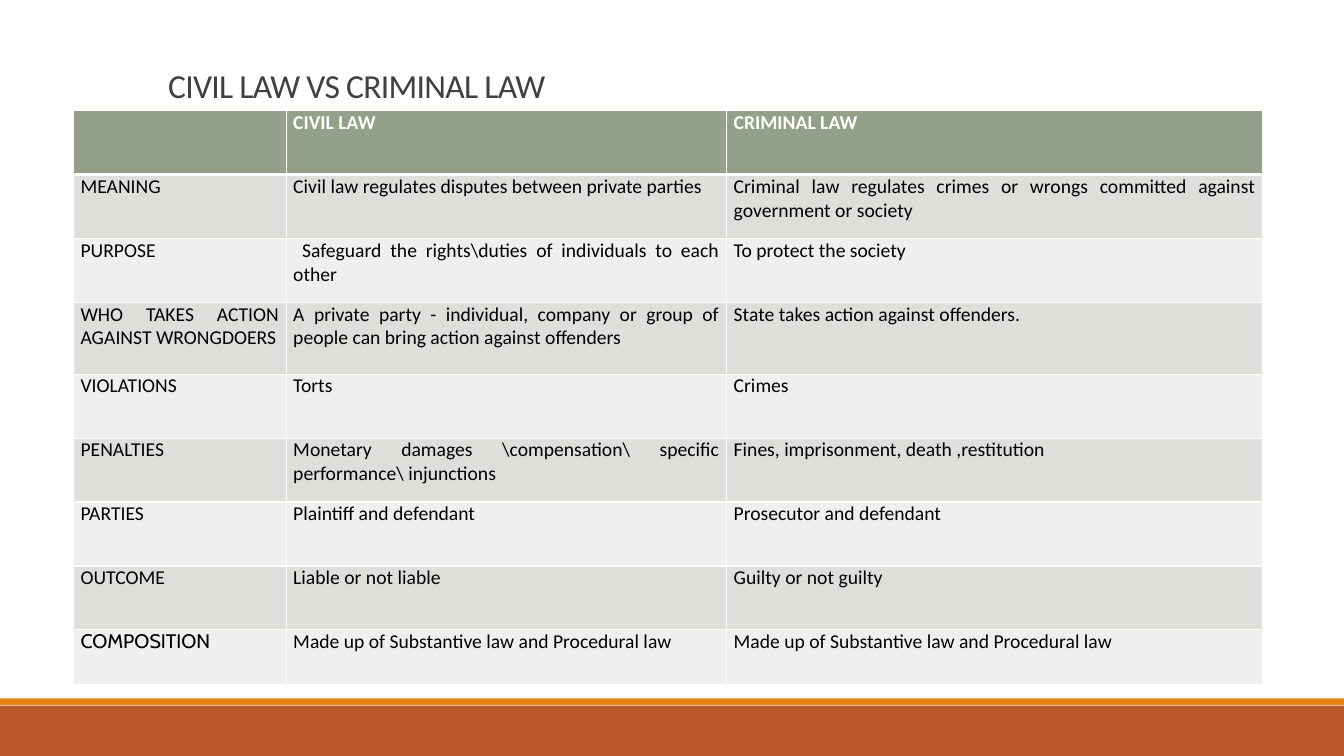
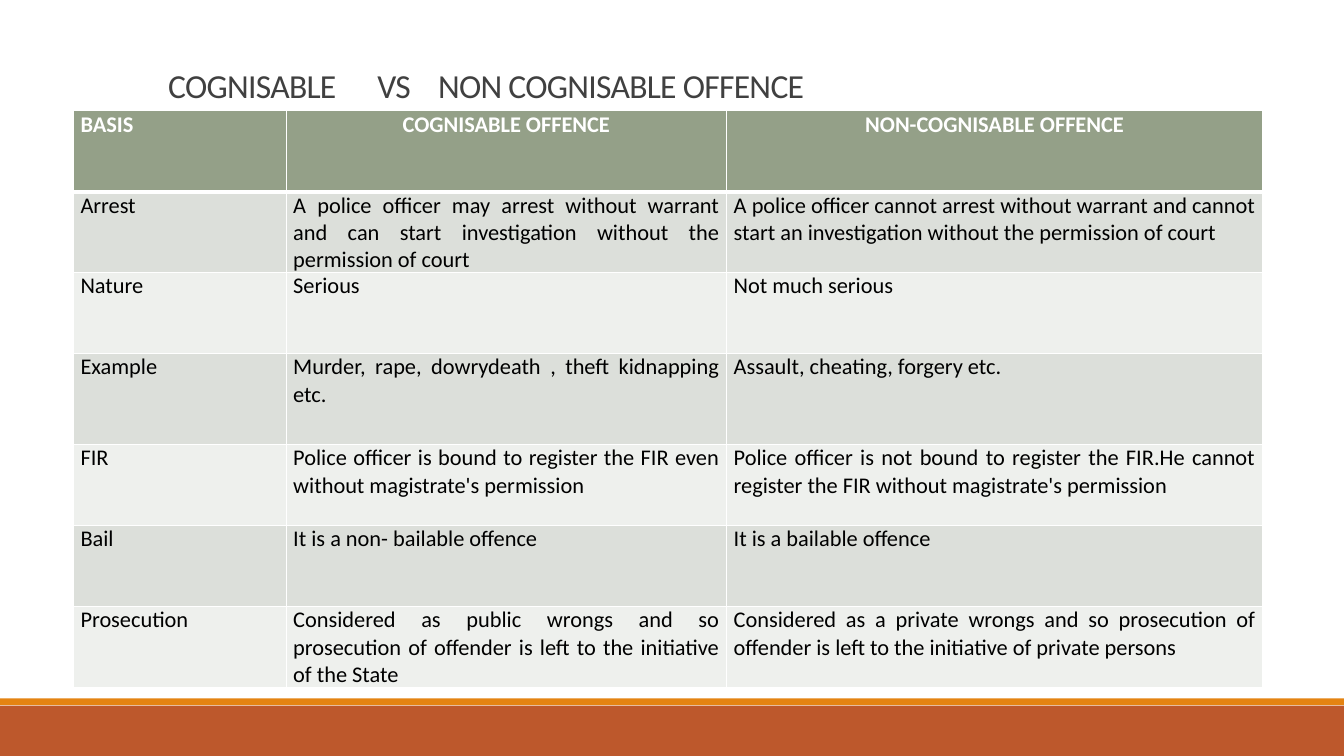
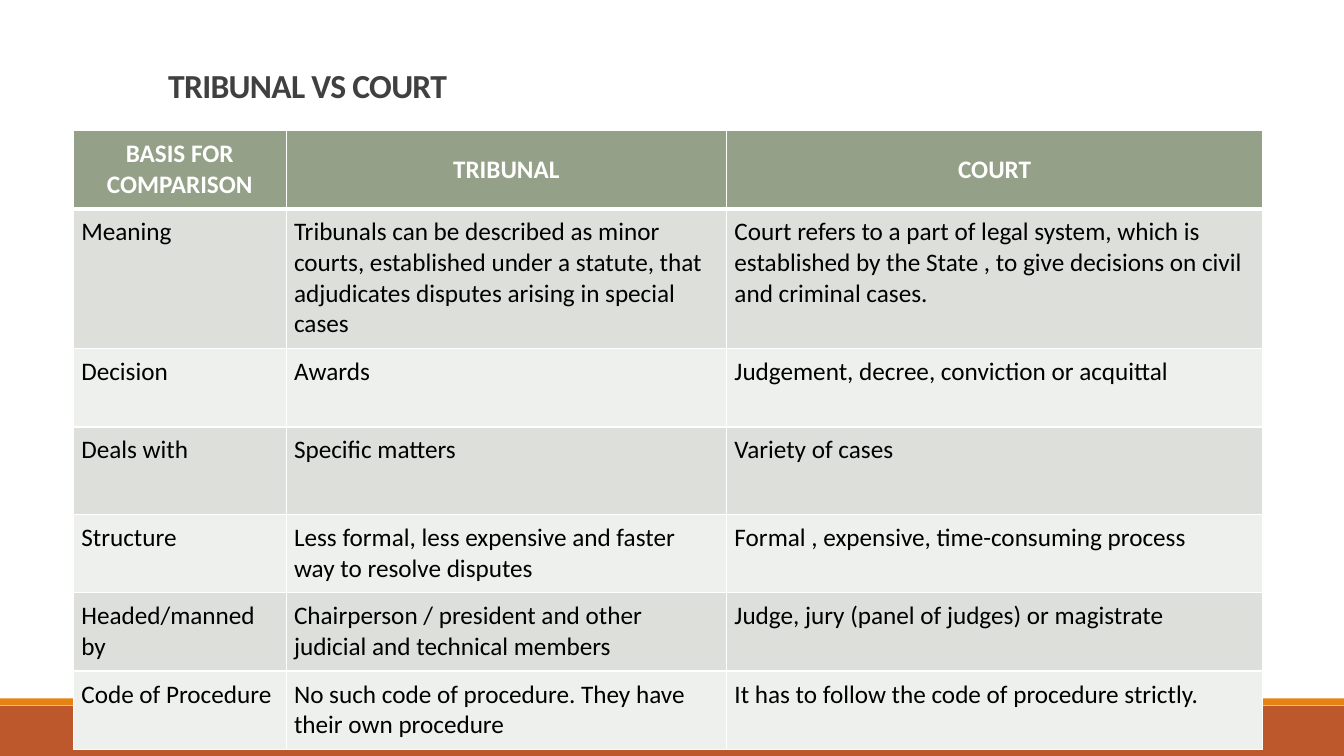
from lxml import etree
from pptx import Presentation
from pptx.dml.color import RGBColor
from pptx.enum.shapes import MSO_SHAPE
from pptx.enum.text import MSO_ANCHOR, PP_ALIGN
from pptx.oxml.ns import qn
from pptx.util import Cm, Pt

WHITE = RGBColor(0xFF, 0xFF, 0xFF)
BLACK = RGBColor(0x00, 0x00, 0x00)
GREY = RGBColor(0x40, 0x40, 0x40)
RUST = RGBColor(0xBD, 0x58, 0x2C)
ORANGE = RGBColor(0xE4, 0x83, 0x12)
SAGE = RGBColor(0x94, 0xA0, 0x88)
DARK = RGBColor(0xDC, 0xDF, 0xDA)
LIGHT = RGBColor(0xEE, 0xF0, 0xED)

RECT = MSO_SHAPE.RECTANGLE
TOP, MIDDLE, BOTTOM = MSO_ANCHOR.TOP, MSO_ANCHOR.MIDDLE, MSO_ANCHOR.BOTTOM
LEFT, CENTER, JUSTIFY = PP_ALIGN.LEFT, PP_ALIGN.CENTER, PP_ALIGN.JUSTIFY

FONT = "Calibri"
WIDE, HIGH = 33.87, 19.05
COLS = (5.36, 11.1, 13.51)


def write(frame, text, size=14, color=BLACK, bold=False, align=LEFT,
          font=FONT, lead=None, track=0, stops=()):
    para = frame.paragraphs[0]
    para.alignment = align
    if lead:
        para.line_spacing = lead
    if stops:
        tabs = etree.SubElement(para._p.get_or_add_pPr(), qn("a:tabLst"))
        for stop in stops:
            etree.SubElement(tabs, qn("a:tab"), pos=str(Cm(stop)), algn="l")
    run = para.add_run()
    run.text = text
    run.font.name = font
    run.font.size = Pt(size)
    run.font.bold = bold
    run.font.color.rgb = color
    if track:
        run._r.get_or_add_rPr().set("spc", str(int(track * 100)))


def border(cell, **widths):
    props = cell._tc.get_or_add_tcPr()
    for side in "LRTB":
        width = Pt(widths.get(side, 1))
        line = etree.SubElement(props, qn("a:ln" + side), w=str(width))
        fill = etree.SubElement(line, qn("a:solidFill"))
        etree.SubElement(fill, qn("a:srgbClr"), val=str(WHITE))


class Deck:
    def __init__(self):
        self.show = Presentation()
        self.show.slide_width = Cm(WIDE)
        self.show.slide_height = Cm(HIGH)
        self.slide = None

    def page(self, title, **style):
        self.slide = self.show.slides.add_slide(self.show.slide_layouts[6])
        self.band(17.78, 1.27, RUST)
        self.band(17.6, 0.17, ORANGE)
        self.title(title, **style)

    def band(self, top, high, color):
        shape = self.slide.shapes.add_shape(
            RECT, 0, Cm(top), Cm(WIDE), Cm(high))
        shape.shadow.inherit = False
        shape.fill.solid()
        shape.fill.fore_color.rgb = color
        shape.line.fill.background()

    def title(self, text, **style):
        box = self.slide.shapes.add_textbox(
            Cm(3.99), Cm(1.27), Cm(26.67), Cm(1.52))
        frame = box.text_frame
        frame.word_wrap = True
        frame.vertical_anchor = BOTTOM
        write(frame, text, size=24, color=GREY, lead=0.85, track=-0.5, **style)

    def table(self, rows, highs, size, heads, body=JUSTIFY, top=2.79,
              side=0.18, pad=0, anchor=TOP, fonts=None):
        fonts = fonts or {}
        grid = self.slide.shapes.add_table(
            len(rows), len(COLS), Cm(1.85), Cm(top),
            Cm(sum(COLS)), Cm(sum(highs))).table
        for col, wide in zip(grid.columns, COLS):
            col.width = Cm(wide)
        for row, high in zip(grid.rows, highs):
            row.height = Cm(high)
        for i, texts in enumerate(rows):
            head = i == 0
            fill = SAGE if head else DARK if i % 2 else LIGHT
            for j, text in enumerate(texts):
                cell = grid.cell(i, j)
                border(cell, T=3 if i == 1 else 1, B=3 if head else 1)
                cell.fill.solid()
                cell.fill.fore_color.rgb = fill
                cell.margin_left = cell.margin_right = Cm(side)
                cell.margin_top = cell.margin_bottom = Cm(pad)
                cell.vertical_anchor = anchor if head else TOP
                if text:
                    write(cell.text_frame, text, size=size, bold=head,
                          color=WHITE if head else BLACK,
                          align=heads[j] if head else body,
                          font=fonts.get(text, FONT))


LAW = (
    ("", "CIVIL LAW", "CRIMINAL LAW"),
    ("MEANING",
     "Civil law regulates disputes between private parties ",
     "Criminal law regulates crimes or wrongs committed against "
     "government or society"),
    ("PURPOSE",
     r" Safeguard the rights\duties of individuals to each other",
     "To protect the society"),
    ("WHO TAKES ACTION AGAINST WRONGDOERS",
     "A private party - individual, company or group of people can bring "
     "action against offenders",
     "State takes action against offenders."),
    ("VIOLATIONS", "Torts", "Crimes"),
    ("PENALTIES",
     r"Monetary damages \compensation\ specific performance\ injunctions",
     "Fines, imprisonment, death ,restitution"),
    ("PARTIES", "Plaintiff and defendant", "Prosecutor and defendant"),
    ("OUTCOME", "Liable or not liable", "Guilty or not guilty"),
    ("COMPOSITION",) + ("Made up of Substantive law and Procedural law",) * 2,
)

OFFENCE = (
    ("BASIS", "COGNISABLE OFFENCE", "NON-COGNISABLE OFFENCE"),
    ("Arrest",
     "A police officer may arrest without warrant and can start "
     "investigation without the permission of court",
     "A police officer cannot arrest without warrant and cannot start an "
     "investigation without the permission of court"),
    ("Nature", "Serious ", "Not much serious"),
    ("Example",
     "Murder, rape, dowrydeath , theft kidnapping etc.",
     "Assault, cheating, forgery etc."),
    ("FIR",
     "Police officer is bound to register the FIR even without "
     "magistrate's permission",
     "Police officer is not bound to register the FIR.He cannot register "
     "the FIR without magistrate's permission"),
    ("Bail", "It is a non- bailable offence", "It is a bailable offence"),
    ("Prosecution",
     "Considered as public wrongs and so prosecution of offender is left to "
     "the initiative of the State",
     "Considered as a private wrongs and so prosecution of offender is left "
     "to the initiative of private persons"),
)

COURT = (
    ("BASIS FOR COMPARISON", "TRIBUNAL", "COURT"),
    ("Meaning",
     "Tribunals can be described as minor courts, established under a "
     "statute, that adjudicates disputes arising in special cases",
     "Court refers to a part of legal system, which is established by the "
     "State , to give decisions on civil and criminal cases."),
    ("Decision", "Awards", "Judgement, decree, conviction or acquittal"),
    ("Deals with", "Specific matters", "Variety of cases"),
    ("Structure",
     "Less formal, less expensive and faster way to resolve disputes",
     "Formal , expensive, time-consuming process"),
    ("Headed/manned by",
     "Chairperson / president and other judicial and technical members",
     "Judge, jury (panel of judges) or magistrate"),
    ("Code of Procedure",
     "No such code of procedure. They have their own procedure",
     "It has to follow the code of procedure strictly."),
)


def main():
    deck = Deck()

    deck.page("CIVIL LAW VS CRIMINAL LAW")
    deck.table(LAW, [1.61] * 3 + [1.81] + [1.61] * 4 + [1.38], 14,
               (JUSTIFY,) * 3, fonts={"COMPOSITION": "Cabin"})

    deck.page("\t".join(("COGNISABLE", "VS", "NON COGNISABLE OFFENCE")),
              stops=(5.27, 6.8))
    deck.table(OFFENCE, [2.04] * 3 + [2.29] + [2.04] * 3, 16,
               (LEFT, CENTER, CENTER))

    deck.page("TRIBUNAL VS COURT", bold=True)
    deck.table(COURT, [1.97, 3.53, 1.97, 2.21] + [1.97] * 3, 18,
               (CENTER,) * 3, body=LEFT, top=3.29, side=0.2, pad=0.2,
               anchor=MIDDLE)

    deck.show.save("out.pptx")


if __name__ == "__main__":
    main()
